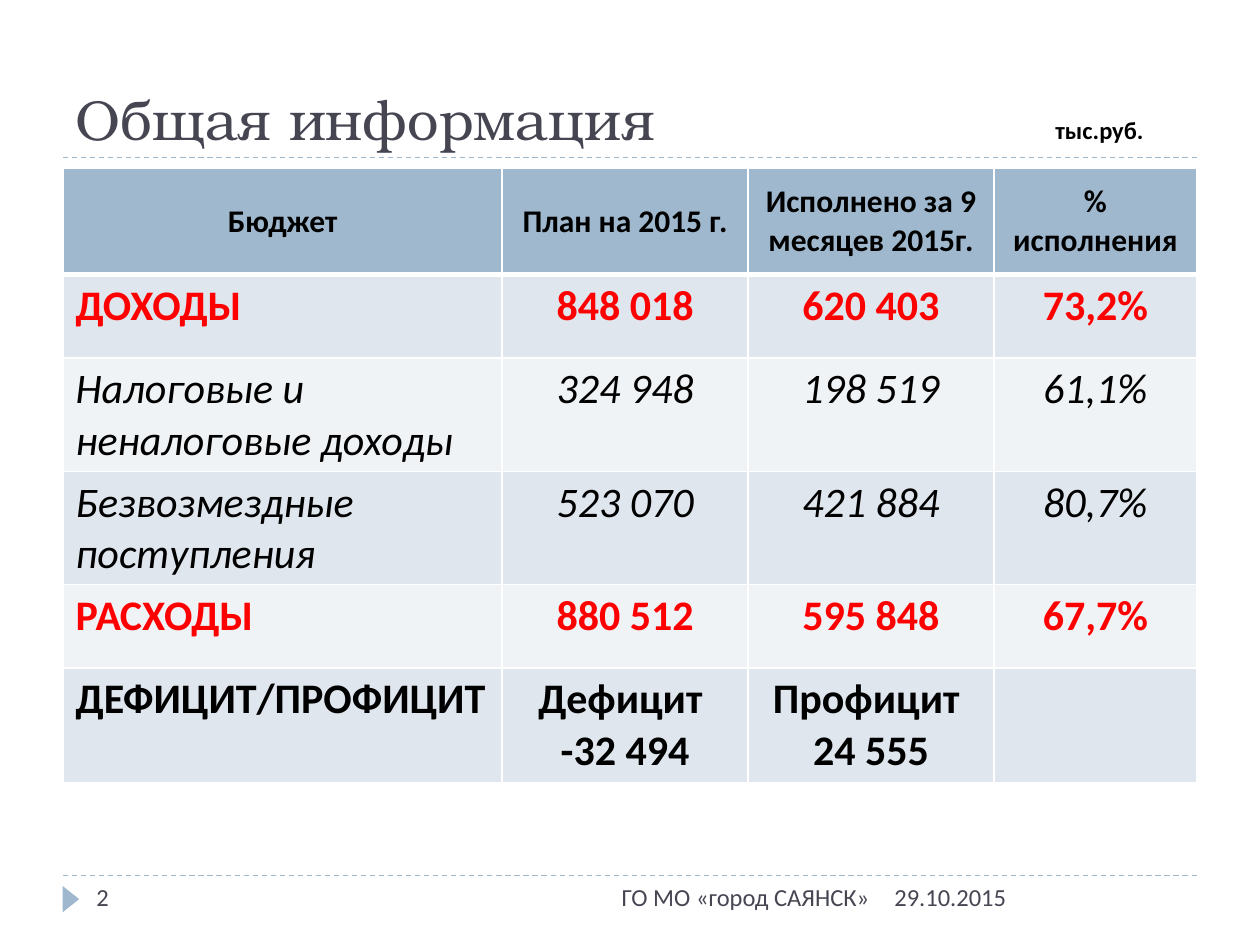
from pptx import Presentation
from pptx.dml.color import RGBColor
from pptx.enum.dml import MSO_LINE as Dash
from pptx.enum.shapes import MSO_CONNECTOR as Conn, MSO_SHAPE as Shape
from pptx.enum.text import MSO_ANCHOR as Anchor, PP_ALIGN as Align
from pptx.oxml.ns import qn
from pptx.util import Pt
from lxml.etree import SubElement, Element

BLUE, DARK, RED, BLACK = "9FB8CD", "464653", "FF0000", "000000"
BANDS = ["DFE6ED", "F0F3F6"]
COLS = [251, 140.5, 140.5, 116]
ROWS = [61, 47.5, 60, 62, 47.5, 65.5]
HEAD = dict(size=18, bold=True, anchor=Anchor.MIDDLE)
TOTAL = dict(size=24, bold=True, color=RED)
PART = dict(size=24, italic=True)
DATA = [
    (HEAD, ["Бюджет", "План на 2015 г.", "Исполнено за 9 месяцев 2015г.", "% исполнения"]),
    (TOTAL, ["ДОХОДЫ", "848 018", "620 403", "73,2%"]),
    (PART, ["Налоговые и неналоговые доходы", "324 948", "198 519", "61,1%"]),
    (PART, ["Безвозмездные поступления", "523 070", "421 884", "80,7%"]),
    (TOTAL, ["РАСХОДЫ", "880 512", "595 848", "67,7%"]),
    (dict(TOTAL, color=BLACK),
     ["ДЕФИЦИТ/ПРОФИЦИТ", "Дефицит \n-32 494", "Профицит \n24 555", ""]),
]


def rgb(code):
    return RGBColor.from_string(code)


def write(frame, text, size=14, color=BLACK, font="Calibri", bold=False,
          italic=False, align=Align.LEFT, anchor=Anchor.TOP):
    frame.word_wrap = True
    frame.vertical_anchor = anchor
    frame.text = text
    for para in frame.paragraphs:
        para.alignment = align
        para.font.size = Pt(size)
        for run in para.runs:
            face = run.font
            face.name, face.size = font, Pt(size)
            face.bold, face.italic = bold, italic
            face.color.rgb = rgb(color)


def label(slide, box, text, **form):
    area = slide.shapes.add_textbox(*map(Pt, box))
    write(area.text_frame, text, **form)


def rule(slide, left, top, width):
    line = slide.shapes.add_connector(
        Conn.STRAIGHT, Pt(left), Pt(top), Pt(left + width), Pt(top))
    line.line.color.rgb = rgb(BLUE)
    line.line.width = Pt(0.75)
    line.line.dash_style = Dash.DASH
    SubElement(line._element.spPr, qn("a:effectLst"))


def edge(cell, widths):
    props = cell._tc.get_or_add_tcPr()
    for spot, (side, width) in enumerate(zip("LRTB", widths)):
        line = Element(qn("a:ln" + side), w=str(Pt(width)))
        fill = SubElement(line, qn("a:solidFill"))
        SubElement(fill, qn("a:srgbClr"), val="FFFFFF")
        props.insert(spot, line)


def header(slide, left, top, width, height):
    label(slide, (left, top, width, height), "Общая информация", size=32,
          color=DARK, font="TeX Gyre Bonum", anchor=Anchor.BOTTOM)
    label(slide, (left + 560, top + 50, 74, 24), "тыс.руб.", bold=True)
    rule(slide, left, top + height, width)


def budget(slide, left, top, width, height):
    grid = slide.shapes.add_table(
        len(ROWS), len(COLS), Pt(left), Pt(top), Pt(width), Pt(height)).table
    for col, size in zip(grid.columns, COLS):
        col.width = Pt(size)
    for row, size in zip(grid.rows, ROWS):
        row.height = Pt(size)
    for y, (form, texts) in enumerate(DATA):
        for x, text in enumerate(texts):
            cell = grid.cell(y, x)
            mid = x > 0 or y == 0
            write(cell.text_frame, text, **form,
                  align=Align.CENTER if mid else Align.LEFT)
            cell.vertical_anchor = form.get("anchor", Anchor.TOP)
            cell.fill.solid()
            cell.fill.fore_color.rgb = rgb(BANDS[(y - 1) % 2] if y else BLUE)
            edge(cell, (1, 1, 3 if y == 1 else 1, 1 if y else 3))


def footer(slide, left, top, width, height):
    rule(slide, left, top, width)
    mark = slide.shapes.add_shape(
        Shape.ISOSCELES_TRIANGLE, Pt(left - 3), Pt(top + 8.7), Pt(15), Pt(9.4))
    mark.rotation = 90
    mark.shadow.inherit = False
    mark.fill.solid()
    mark.fill.fore_color.rgb = rgb(BLUE)
    mark.line.fill.background()
    for start, size, text, align in [
            (468, 180, "29.10.2015", Align.LEFT),
            (192, 276, "ГО МО «город САЯНСК»", Align.RIGHT),
            (12, 156, "2", Align.LEFT)]:
        label(slide, (left + start, top, size, height), text,
              color=DARK, align=align)


def main():
    deck = Presentation()
    deck.slide_width, deck.slide_height = Pt(720), Pt(540)
    slide = deck.slides.add_slide(deck.slide_layouts[6])
    header(slide, 36, 12, 648, 78)
    budget(slide, 36, 96, sum(COLS), sum(ROWS))
    footer(slide, 36, 500.4, 648, 28.8)
    deck.save("out.pptx")


if __name__ == "__main__":
    main()
